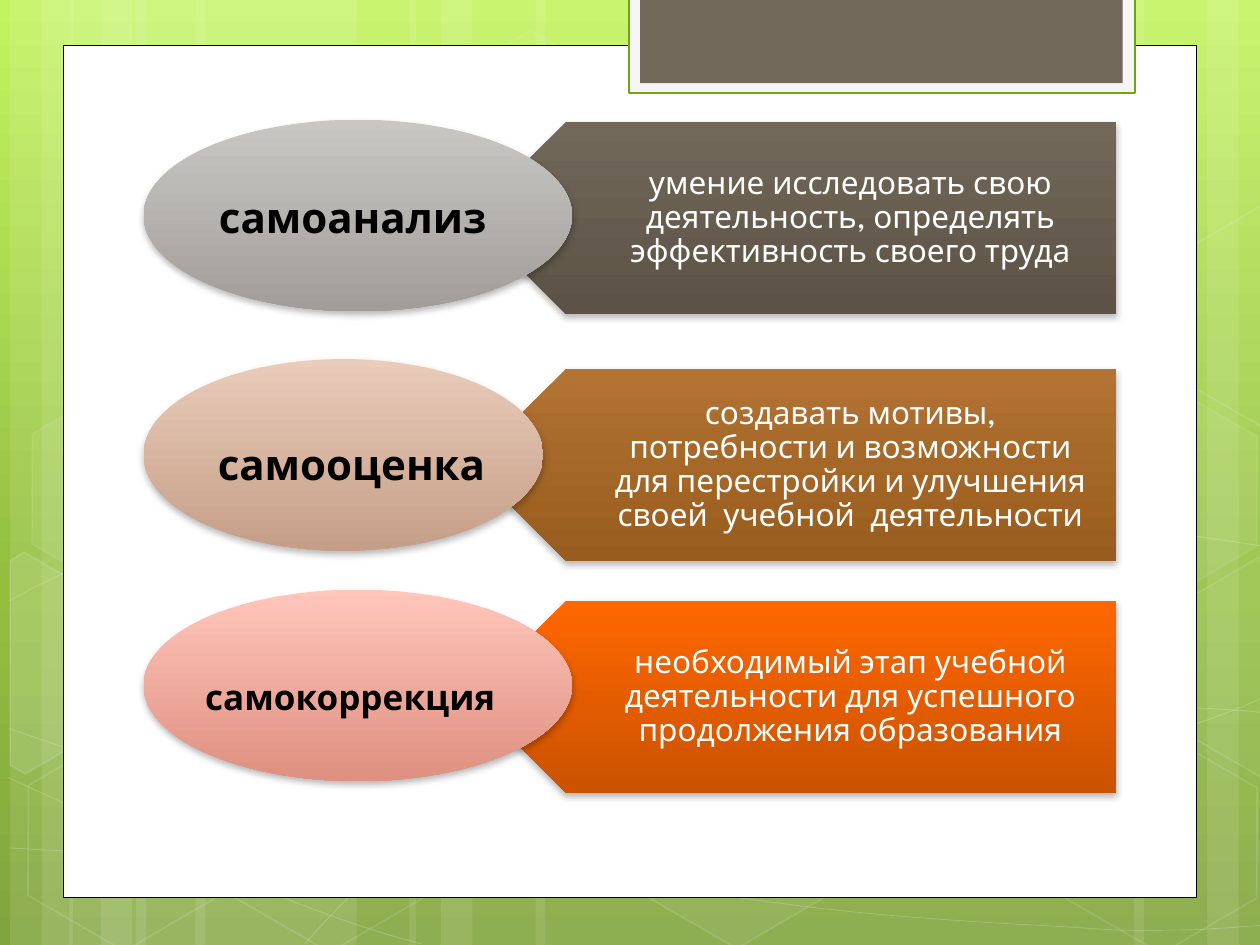
"""Build a slide on self-analysis, self-assessment and self-correction."""
from copy import deepcopy
from math import cos, radians, sin

from lxml.etree import SubElement
from pptx import Presentation
from pptx.dml.color import RGBColor
from pptx.enum.shapes import MSO_SHAPE as Shape
from pptx.enum.text import MSO_ANCHOR as Anchor, MSO_AUTO_SIZE as AutoSize, PP_ALIGN as Align
from pptx.oxml.ns import qn
from pptx.util import Inches, Pt

FONT = "League Spartan"
COLORS = {"white": "FFFFFF", "black": "000000", "frame": "F5F5F5",
          "green": "74A510", "tab": "71685A"}
BACKDROP = [(0, "C3F35F"), (62, "93BF3F"), (100, "81A53E")]

SKILLS = [
    {"name": "самоанализ", "size": 24, "align": Align.CENTER,
     "label": (1.46, 1.47, 2.68, 0.5),
     "meaning": "умение исследовать свою деятельность, определять эффективность своего труда",
     "arrow_top": 0.97, "oval_top": 0.95, "oval_width": 3.4,
     "arrow": ("71685A", "5C5346"), "oval": ("C9C7C4", "A19E9A")},
    {"name": "самооценка", "size": 24, "align": Align.CENTER,
     "label": (1.53, 3.43, 2.52, 0.5),
     "meaning": "создавать мотивы, потребности и возможности для перестройки и улучшения "
                "своей  учебной  деятельности",
     "arrow_top": 2.93, "oval_top": 2.85, "oval_width": 3.17,
     "arrow": ("B27333", "985C1E"), "oval": ("E9CCBA", "C69E87")},
    {"name": "самокоррекция", "size": 20, "align": Align.LEFT,
     "label": (1.53, 5.31, 2.52, 0.44),
     "meaning": "необходимый этап учебной деятельности для успешного продолжения образования",
     "arrow_top": 4.77, "oval_top": 4.68, "oval_width": 3.4,
     "arrow": ("FF6700", "CB5200"), "oval": ("FFC6BC", "DF9080")},
]
BAND_HEIGHT = 1.52

STRIPES = [(1.08, 1.75, 0), (0.08, 0.5, 0), (0.33, 0.83, 0), (1.55, 1.75, 0), (0.55, 0.5, 0),
           (0.8, 0.83, 0), (7.33, 1.75, 180), (9.58, 0.5, 180), (9, 0.83, 180),
           (4.25, 3.08, 0), (3.25, 0.5, 0), (3.5, 0.83, 0)]

WAVES = [
    [[(0.07, 6.73)],
     [(0.61, 6.76), (1.15, 6.79), (1.9, 6.78)], [(2.65, 6.77), (3.58, 6.75), (4.58, 6.65)],
     [(5.58, 6.55), (7, 6.36), (7.92, 6.17)], [(8.83, 5.98), (9.77, 5.68), (10.07, 5.51)]],
    [[(0.07, 4.77)],
     [(0.36, 4.61), (0.65, 4.46), (1.21, 4.31)], [(1.78, 4.16), (2.59, 3.94), (3.47, 3.87)],
     [(4.36, 3.8), (5.44, 3.79), (6.54, 3.87)], [(7.64, 3.95), (9.47, 4.26), (10.07, 4.34)]],
    [[(0.06, 6.17)], [(1.27, 6.72), (2.47, 7.27), (3.34, 7.49)]],
    [[(0.07, 5.78)],
     [(0.38, 5.89), (0.7, 6), (1.28, 6.16)], [(1.86, 6.31), (2.73, 6.56), (3.57, 6.73)],
     [(4.4, 6.9), (5.45, 7.08), (6.28, 7.18)], [(7.11, 7.29), (8, 7.33), (8.53, 7.36)],
     [(9.05, 7.4), (9.19, 7.38), (9.45, 7.38)], [(9.71, 7.37), (9.89, 7.35), (10.07, 7.34)]],
    [[(2.42, 7.49)],
     [(2.6, 7.29), (2.78, 7.09), (3.02, 6.91)], [(3.26, 6.73), (3.6, 6.53), (3.88, 6.39)],
     [(4.16, 6.25), (4.33, 6.19), (4.7, 6.09)], [(5.06, 5.99), (5.73, 5.85), (6.08, 5.78)],
     [(6.44, 5.71), (6.49, 5.71), (6.8, 5.69)], [(7.11, 5.66), (7.6, 5.63), (7.94, 5.62)],
     [(8.29, 5.61), (8.86, 5.62), (8.86, 5.62)], [(9.53, 5.62)],
     [(9.71, 5.63), (9.88, 5.64), (9.97, 5.65)], [(10.06, 5.66), (10.03, 5.65), (10.06, 5.66)]],
]

HEXAGONS = [(3.34, 0.36, 4, 8), (4.97, 5.89, 6, 12), (0.11, 5.91, 0, 12), (0.14, 3.12, 7, 8),
            (1.74, 5.92, 0, 12), (7.53, 4.53, 10, 12), (8.34, 5.93, 0, 12), (8.34, 3.14, 7, 8)]
TILT = 30
CUT_HEXAGONS = [
    ((0.36, 5.35), 10,
     [(0.08, 4.45), (0.19, 4.38), (0.96, 4.82), (0.95, 5.7), (0.2, 6.14), (0.08, 6.07)]),
    ((9.85, 5.2), 4,
     [(9.26, 4.85), (10.01, 4.41), (10.09, 4.46), (10.09, 6.13), (10.02, 6.17), (9.26, 5.73)]),
    ((9.85, 2.41), 0,
     [(9.26, 2.07), (10.01, 1.63), (10.1, 1.68), (10.09, 3.35), (10.02, 3.39), (9.26, 2.95)]),
]

deck = Presentation()
deck.slide_width, deck.slide_height = Inches(10), Inches(7.5)
slide = deck.slides.add_slide(deck.slide_layouts[6])
shapes = slide.shapes


def paint(fill, color, opacity=100):
    if not opacity:
        fill.background()
        return
    fill.solid()
    fill.fore_color.rgb = RGBColor.from_string(color)
    if opacity < 100:
        tint = fill._xPr.find(qn("a:solidFill"))[0]
        SubElement(tint, qn("a:alpha"), val=str(opacity * 1000))


def paint_gradient(fill, owner, stops):
    fill.gradient()
    fill.gradient_angle = 270
    owner.find(".//" + qn("a:gradFill")).set("rotWithShape", "0")
    stop_list = owner.find(".//" + qn("a:gsLst"))
    while len(stop_list) < len(stops):
        stop_list.append(deepcopy(stop_list[0]))
    for stop, (position, color) in zip(fill.gradient_stops, stops):
        stop.position = position / 100
        stop.color.rgb = RGBColor.from_string(color)


def style(shape, color, opacity=100, line=None, width=1, line_opacity=100):
    shape.shadow.inherit = False
    paint(shape.fill, color, opacity)
    if line:
        shape.line.width = Pt(width)
        paint(shape.line.fill, line, line_opacity)
    else:
        shape.line.fill.background()


def add_preset(kind, *box):
    return shapes.add_shape(kind, *map(Inches, box))


def add_outline(points, close):
    pen = shapes.build_freeform(Inches(points[0][0]), Inches(points[0][1]))
    pen.add_line_segments([(Inches(x), Inches(y)) for x, y in points[1:]], close=close)
    return pen.convert_to_shape()


def add_wave(segments):
    wave = add_outline([point for segment in segments for point in segment], False)
    steps = iter(wave.element.findall(".//" + qn("a:lnTo")))
    for segment in segments[1:]:
        first, *others = [next(steps) for _ in segment]
        if others:
            first.tag = qn("a:cubicBezTo")
            for step in others:
                first.append(step[0])
                step.getparent().remove(step)
    return wave


def turned(point, center, degrees):
    x, y = point[0] - center[0], point[1] - center[1]
    c, s = cos(radians(degrees)), sin(radians(degrees))
    return center[0] + x * c - y * s, center[1] + x * s + y * c


def add_band_part(kind, colors, *box):
    part = add_preset(kind, *box)
    part.line.fill.background()
    part.shadow.inherit = False
    paint_gradient(part.fill, part.element, [(0, colors[0]), (100, colors[1])])
    effects = part.element.spPr.find(qn("a:effectLst"))
    shadow = SubElement(effects, qn("a:outerShdw"), blurRad=str(Pt(4)), dist=str(Pt(2)),
                        dir="5400000", rotWithShape="0")
    tint = SubElement(shadow, qn("a:srgbClr"), val=COLORS["black"])
    SubElement(tint, qn("a:alpha"), val="28000")
    return part


def add_text(text, box, size, color, align, bold=False):
    frame = shapes.add_textbox(*map(Inches, box)).text_frame
    frame.word_wrap = True
    paragraph = frame.paragraphs[0]
    paragraph.text, paragraph.alignment = text, align
    font = paragraph.font
    font.name, font.size, font.bold = FONT, Pt(size), bold
    font.color.rgb = RGBColor.from_string(color)
    return frame


white, black = COLORS["white"], COLORS["black"]
paint_gradient(slide.background.fill, slide.element, BACKDROP)
for left, width, turn in STRIPES:
    stripe = add_preset(Shape.RECTANGLE, left, 0, width, 7.5)
    stripe.rotation = turn
    style(stripe, white, 10)
for segments in WAVES:
    style(add_wave(segments), white, 0, white, 0.5, 20)
for left, top, opacity, line_opacity in HEXAGONS:
    hexagon = add_preset(Shape.HEXAGON, left, top, 1.75, 1.52)
    hexagon.adjustments[0] = 0.285
    hexagon.rotation = TILT
    style(hexagon, white, opacity, white, 1, line_opacity)
for center, opacity, corners in CUT_HEXAGONS:
    cut_hexagon = add_outline([turned(corner, center, -TILT) for corner in corners], True)
    cut_hexagon.rotation = TILT
    style(cut_hexagon, white, opacity, white, 1, 12)

style(add_preset(Shape.RECTANGLE, 0.5, 0.36, 9, 6.76), white, line=black, width=0.5)
style(add_preset(Shape.RECTANGLE, 4.99, -0.02, 4.02, 0.76), COLORS["frame"],
      line=COLORS["green"], width=1.25)
style(add_preset(Shape.RECTANGLE, 5.08, -0.02, 3.83, 0.68), COLORS["tab"])

for skill in SKILLS:
    top = skill["arrow_top"]
    arrow = add_band_part(Shape.PENTAGON, skill["arrow"], 3.73, top, 5.13, BAND_HEIGHT)
    arrow.rotation = 180
    meaning = add_text(skill["meaning"], (4.11, top, 4.75, BAND_HEIGHT), 18, white, Align.CENTER)
    meaning.vertical_anchor = Anchor.MIDDLE
    meaning.margin_left, meaning.margin_right = Inches(0.67), Inches(0.14)
    meaning.margin_top = meaning.margin_bottom = Inches(0.07)
    meaning.paragraphs[0].line_spacing = 0.9
    add_band_part(Shape.OVAL, skill["oval"], 1.14, skill["oval_top"], skill["oval_width"],
                  BAND_HEIGHT)
for skill in SKILLS:
    name = add_text(skill["name"], skill["label"], skill["size"], black, skill["align"], True)
    name.auto_size = AutoSize.SHAPE_TO_FIT_TEXT

deck.save("out.pptx")
